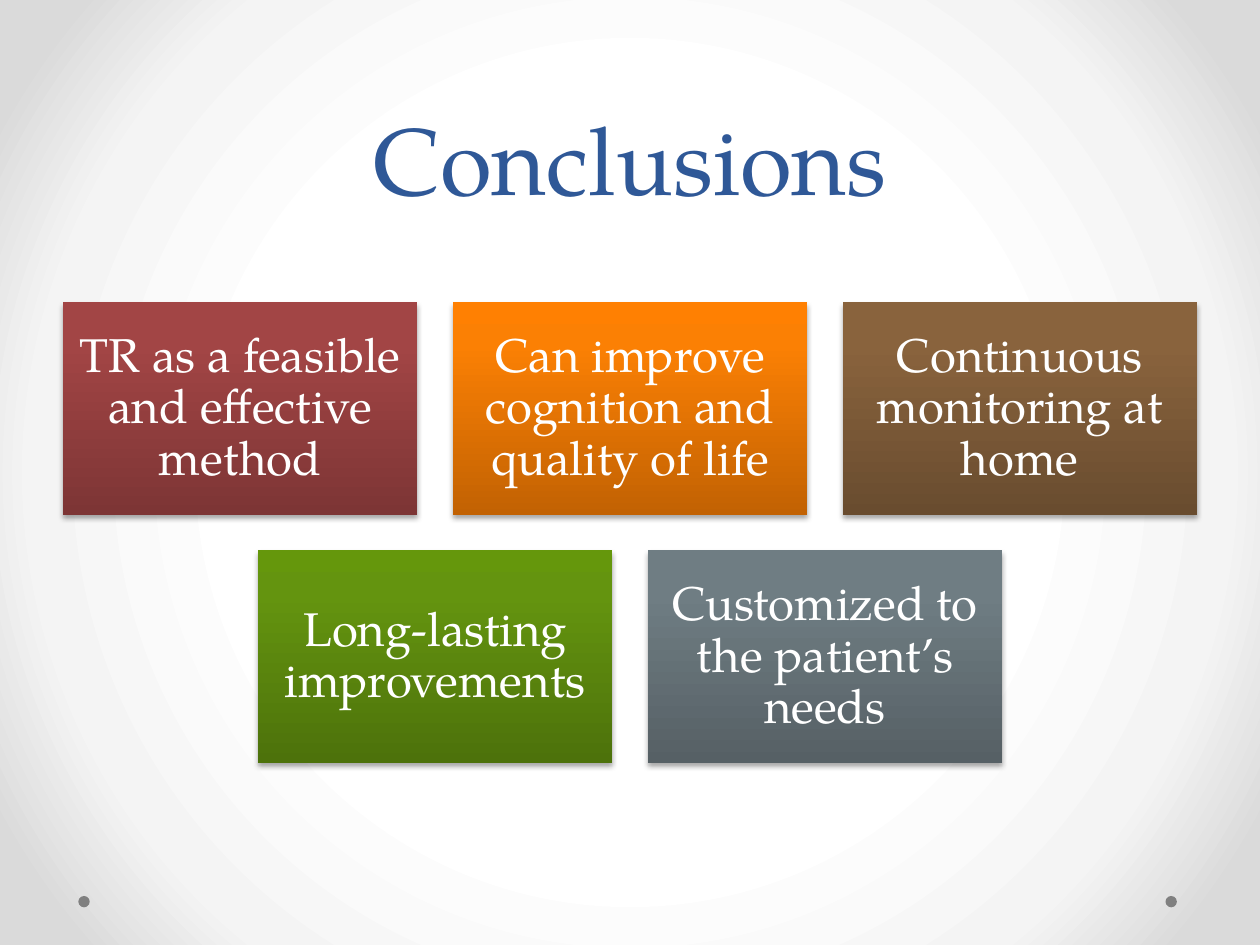
"""Build the Conclusions slide: a title above two centred rows of shaded cards."""
import lxml.etree
import pptx
import pptx.dml.color
import pptx.enum.shapes
import pptx.enum.text
import pptx.oxml
import pptx.oxml.ns
import pptx.util

Pt = pptx.util.Pt
Shapes = pptx.enum.shapes.MSO_SHAPE
Anchor = pptx.enum.text.MSO_ANCHOR

TITLE = "Conclusions"
CARD_ROWS = [
    [
        ("TR as a feasible and effective method", "red"),
        ("Can improve cognition and quality of life", "orange"),
        ("Continuous monitoring at home", "brown"),
    ],
    [
        ("Long-lasting improvements", "green"),
        ("Customized to the patient’s needs", "slate"),
    ],
]
THEME = {
    "font": "TeX Gyre Pagella",
    "title_size": 54,
    "title_spacing": Pt(58),
    "title_color": "2F5897",
    "card_size": 27,
    "card_spacing": 0.9,
    "card_color": "FFFFFF",
    "dot": "808080",
    "background": [(50, "FFFFFF"), (76, "F4F4F4"), (92, "DADADA")],
    "red": [(0, "7D3535"), (80, "A24545"), (100, "A44343")],
    "orange": [(0, "C26203"), (80, "FB8004"), (100, "FF8002")],
    "brown": [(0, "694C2F"), (80, "89633D"), (100, "8B633C")],
    "green": [(0, "4D720B"), (80, "64940F"), (100, "65970C")],
    "slate": [(0, "566065"), (80, "6F7D83"), (100, "6F7E84")],
}
SLIDE_WIDTH, SLIDE_HEIGHT = 720, 540
CARD_WIDTH, CARD_HEIGHT, CARD_GAP = 202.5, 121.5, 20.25
CARDS_TOP, CARD_INSET = 172.8, 8
DOT_LEFTS, DOT_TOP, DOT_SIZE = (44.75, 666), 512, 6.5

NAMESPACE = pptx.oxml.ns.nsdecls("a")
UPWARD = '<a:lin ang="16200000" scaled="0"/>'
RADIAL = '<a:path path="circle"><a:fillToRect l="50000" t="50000" r="50000" b="50000"/></a:path>'
SHADOW = (
    f'<a:outerShdw {NAMESPACE} blurRad="{Pt(3.1)}" dist="{Pt(1.8)}" dir="5400000" rotWithShape="0">'
    '<a:srgbClr val="000000"><a:alpha val="35000"/></a:srgbClr></a:outerShdw>'
)


def rgb(color):
    return pptx.dml.color.RGBColor.from_string(color)


def find(element, tag):
    return element.find(".//" + pptx.oxml.ns.qn(tag))


def set_gradient(fill, element, stops, direction):
    fill.gradient()
    stop_xml = "".join(
        f'<a:gs pos="{position * 1000}"><a:srgbClr val="{color}"/></a:gs>' for position, color in stops
    )
    gradient = pptx.oxml.parse_xml(
        f'<a:gradFill {NAMESPACE} rotWithShape="1"><a:gsLst>{stop_xml}</a:gsLst>{direction}</a:gradFill>'
    )
    current = find(element, "a:gradFill")
    current.getparent().replace(current, gradient)


def write_text(frame, text, *, size, color, spacing, anchor):
    frame.word_wrap = True
    frame.auto_size = pptx.enum.text.MSO_AUTO_SIZE.NONE
    frame.vertical_anchor = anchor
    frame.text = text
    paragraph = frame.paragraphs[0]
    paragraph.alignment = pptx.enum.text.PP_ALIGN.CENTER
    paragraph.line_spacing = spacing
    font = paragraph.runs[0].font
    font.name, font.size, font.color.rgb = THEME["font"], Pt(size), rgb(color)


def add_plain_shape(slide, kind, left, top, width, height):
    shape = slide.shapes.add_shape(kind, Pt(left), Pt(top), Pt(width), Pt(height))
    shape.shadow.inherit = False
    shape.line.fill.background()
    return shape


def add_card(slide, text, palette, left, top):
    card = add_plain_shape(slide, Shapes.RECTANGLE, left, top, CARD_WIDTH, CARD_HEIGHT)
    set_gradient(card.fill, card._element, THEME[palette], UPWARD)
    find(card._element, "a:effectLst").append(pptx.oxml.parse_xml(SHADOW))
    frame = card.text_frame
    frame.margin_left = frame.margin_right = Pt(CARD_INSET)
    frame.margin_top = frame.margin_bottom = Pt(CARD_INSET)
    write_text(frame, text, size=THEME["card_size"], color=THEME["card_color"],
               spacing=THEME["card_spacing"], anchor=Anchor.MIDDLE)


def main():
    presentation = pptx.Presentation()
    presentation.slide_width, presentation.slide_height = Pt(SLIDE_WIDTH), Pt(SLIDE_HEIGHT)
    slide = presentation.slides.add_slide(presentation.slide_layouts[5])
    set_gradient(slide.background.fill, slide._element, THEME["background"], RADIAL)

    title = slide.shapes.title
    title.left, title.top, title.width, title.height = Pt(36), Pt(0), Pt(648), Pt(126)
    write_text(title.text_frame, TITLE, size=THEME["title_size"], color=THEME["title_color"],
               spacing=THEME["title_spacing"], anchor=Anchor.BOTTOM)

    for left in DOT_LEFTS:
        dot = add_plain_shape(slide, Shapes.OVAL, left, DOT_TOP, DOT_SIZE, DOT_SIZE)
        dot.fill.solid()
        dot.fill.fore_color.rgb = rgb(THEME["dot"])

    for row, cards in enumerate(CARD_ROWS):
        row_width = len(cards) * (CARD_WIDTH + CARD_GAP) - CARD_GAP
        row_left = (SLIDE_WIDTH - row_width) / 2
        top = CARDS_TOP + row * (CARD_HEIGHT + CARD_GAP)
        for column, (text, palette) in enumerate(cards):
            add_card(slide, text, palette, row_left + column * (CARD_WIDTH + CARD_GAP), top)

    presentation.save("out.pptx")


if __name__ == "__main__":
    main()
